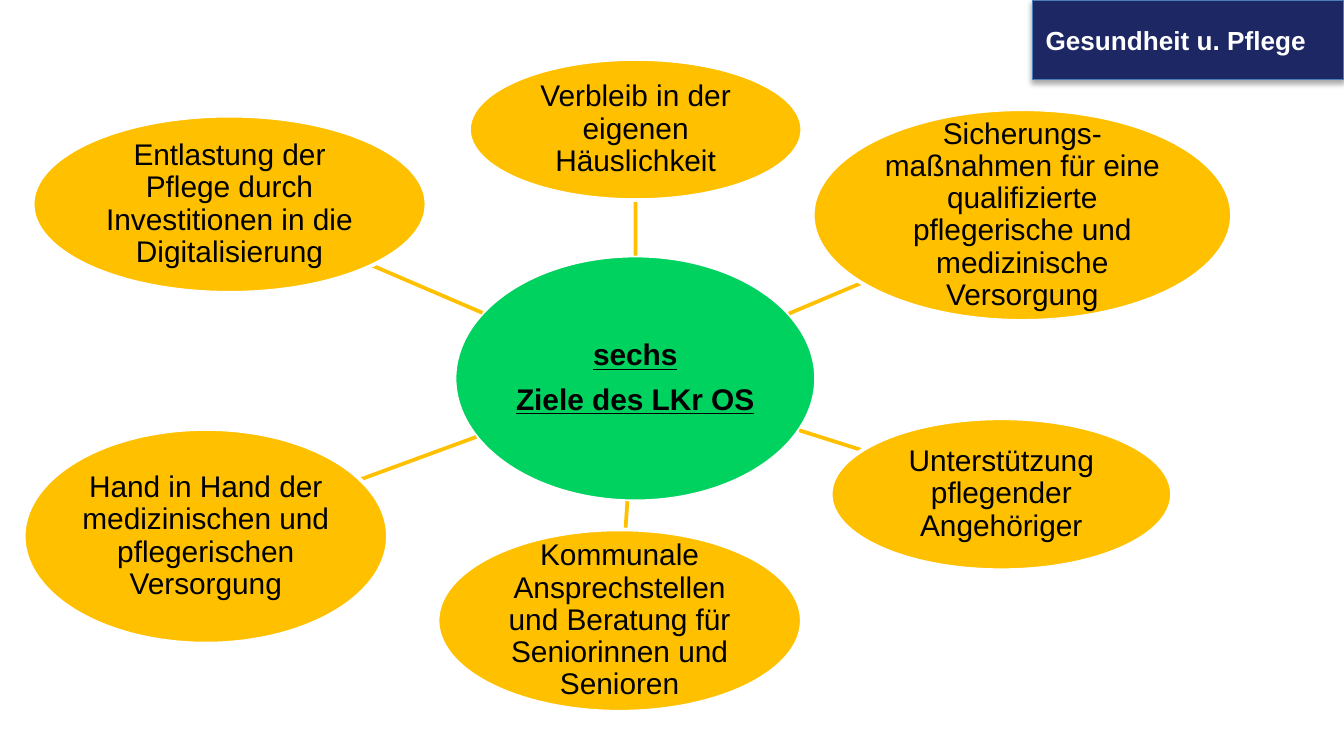
from math import hypot

from lxml import etree
from pptx import Presentation
from pptx.dml.color import RGBColor
from pptx.enum.shapes import MSO_CONNECTOR, MSO_SHAPE
from pptx.enum.text import MSO_ANCHOR, PP_ALIGN
from pptx.oxml import parse_xml
from pptx.oxml.ns import nsdecls, qn
from pptx.util import Pt

RECTANGLE, OVAL = MSO_SHAPE.RECTANGLE, MSO_SHAPE.OVAL
STRAIGHT = MSO_CONNECTOR.STRAIGHT
MIDDLE = MSO_ANCHOR.MIDDLE
LEFT, CENTER = PP_ALIGN.LEFT, PP_ALIGN.CENTER

NAVY = RGBColor(0x1D, 0x27, 0x63)
BLUE = RGBColor(0x4B, 0x7E, 0xBC)
GREEN = RGBColor(0x00, 0xD2, 0x5F)
AMBER = RGBColor(0xFF, 0xC0, 0x00)
WHITE = RGBColor(0xFF, 0xFF, 0xFF)
BLACK = RGBColor(0x00, 0x00, 0x00)

# Left, top, width and height in points
HEADER = (553, 0, 167, 42.5)
HUB = (243.5, 136.9, 193.7, 131.7)
GOALS = [
    ("Verbleib in der eigenen Häuslichkeit", (251.2, 31.6, 178.6, 75.6)),
    ("Unterstützung pflegender Angehöriger", (445, 224.1, 182.9, 81.4)),
    ("Kommunale Ansprechstellen und Beratung für Seniorinnen und Senioren",
     (234.4, 283.6, 195.1, 97.7)),
    ("Sicherungs-maßnahmen für eine qualifizierte pflegerische und "
     "medizinische Versorgung", (435.4, 58.5, 224.6, 113.4)),
    ("Hand in Hand der medizinischen und pflegerischen Versorgung",
     (12.7, 229.8, 195.1, 115)),
    ("Entlastung der Pflege durch Investitionen in die Digitalisierung",
     (17.5, 62, 211, 94.9)),
]


def add_filled_shape(slide, kind, box, fill, line, line_width):
    shape = slide.shapes.add_shape(kind, *map(Pt, box))
    shape.shadow.inherit = False
    shape.fill.solid()
    shape.fill.fore_color.rgb = fill
    shape.line.color.rgb = line
    shape.line.width = Pt(line_width)
    return shape


def style_paragraph(para, size, color, align, bold=False, underline=False):
    para.alignment = align
    for span in para.runs:
        font = span.font
        font.name = "Arial"
        font.size = Pt(size)
        font.color.rgb = color
        font.bold = bold
        font.underline = underline


def add_oval(slide, text, box, fill, emphasis=False):
    oval = add_filled_shape(slide, OVAL, box, fill, WHITE, 2)
    frame = oval.text_frame
    frame.word_wrap = True
    frame.vertical_anchor = MIDDLE
    frame.margin_left = frame.margin_right = Pt(0.8)
    frame.margin_top = frame.margin_bottom = Pt(0.8)
    frame.text = text
    for para in frame.paragraphs:
        para.line_spacing = 0.9
        style_paragraph(para, 16, BLACK, CENTER, emphasis, emphasis)
    for para in frame.paragraphs[:-1]:
        para.space_after = Pt(6.4)


def center_of(box):
    left, top, width, height = box
    return left + width / 2, top + height / 2


def edge_toward(box, target):
    """Point where the ray from the oval's centre to target leaves the oval."""
    x, y = center_of(box)
    dx, dy = target[0] - x, target[1] - y
    reach = hypot(dx / (box[2] / 2), dy / (box[3] / 2))
    return x + dx / reach, y + dy / reach


def add_spoke(slide, hub, goal):
    start = edge_toward(hub, center_of(goal))
    end = edge_toward(goal, center_of(hub))
    spoke = slide.shapes.add_connector(STRAIGHT, *map(Pt, start + end))
    spoke.line.color.rgb = AMBER
    spoke.line.width = Pt(2)
    etree.SubElement(spoke._element.spPr, qn("a:effectLst"))


def add_drop_shadow(shape):
    effects = shape._element.spPr.find(qn("a:effectLst"))
    effects.append(parse_xml(
        f'<a:outerShdw {nsdecls("a")} blurRad="{Pt(3.1)}" dist="{Pt(1.8)}" '
        'dir="5400000" rotWithShape="0"><a:srgbClr val="000000">'
        '<a:alpha val="35000"/></a:srgbClr></a:outerShdw>'))


def add_header(slide):
    header = add_filled_shape(slide, RECTANGLE, HEADER, NAVY, BLUE, 0.75)
    add_drop_shadow(header)
    frame = header.text_frame
    frame.word_wrap = True
    frame.vertical_anchor = MIDDLE
    frame.text = "Gesundheit u. Pflege"
    style_paragraph(frame.paragraphs[0], 14, WHITE, LEFT, bold=True)


def main():
    deck = Presentation()
    deck.slide_width, deck.slide_height = Pt(720), Pt(405)
    slide = deck.slides.add_slide(deck.slide_layouts[6])
    add_header(slide)
    add_oval(slide, "sechs\nZiele des LKr OS", HUB, GREEN, emphasis=True)
    for text, box in GOALS:
        add_spoke(slide, HUB, box)
        add_oval(slide, text, box, AMBER)
    deck.save("out.pptx")


if __name__ == "__main__":
    main()
